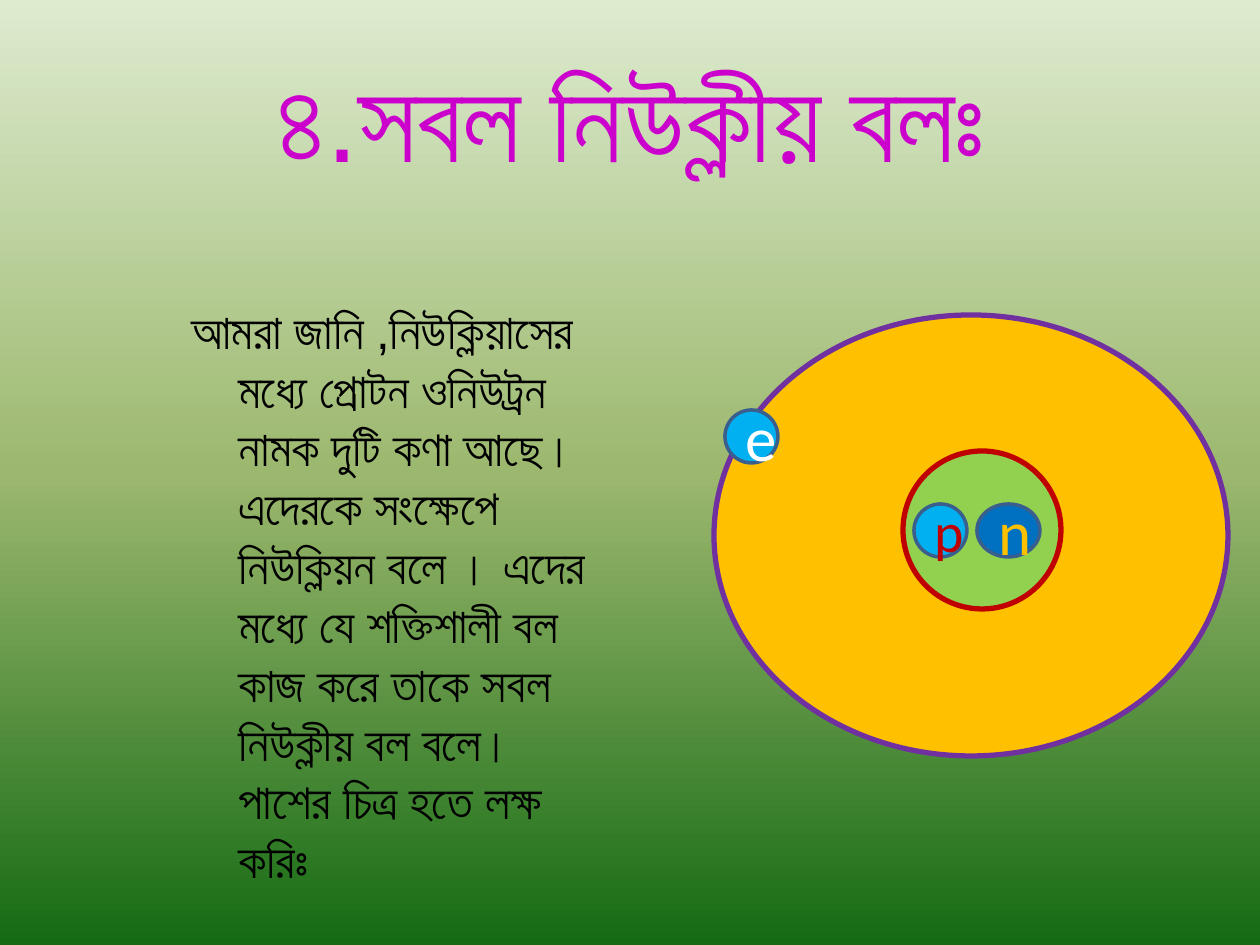
from copy import deepcopy

from pptx import Presentation
from pptx.dml.color import RGBColor
from pptx.enum.shapes import MSO_SHAPE
from pptx.enum.text import MSO_ANCHOR, MSO_AUTO_SIZE, PP_ALIGN
from pptx.oxml.ns import qn
from pptx.util import Emu, Pt

PX = 914400 // 126  # EMU in one px

MAGENTA = RGBColor(0xCC, 0x00, 0xCC)
BLACK = RGBColor(0x00, 0x00, 0x00)
WHITE = RGBColor(0xFF, 0xFF, 0xFF)
AMBER = RGBColor(0xFF, 0xC0, 0x00)
PURPLE = RGBColor(0x70, 0x30, 0xA0)
LIME = RGBColor(0x92, 0xD0, 0x50)
RED = RGBColor(0xC0, 0x00, 0x00)
SKY = RGBColor(0x00, 0xB0, 0xF0)
BLUE = RGBColor(0x00, 0x70, 0xC0)
SLATE = RGBColor(0x3A, 0x5F, 0x8C)
BACKDROP = [
    (0, RGBColor(0xDD, 0xEB, 0xCF)),
    (0.5, RGBColor(0x9C, 0xB8, 0x6E)),
    (1, RGBColor(0x15, 0x6B, 0x13)),
]

TITLE = "৪.সবল নিউক্লীয় বলঃ"
EXPLANATION = (
    "আমরা জানি ,নিউক্লিয়াসের মধ্যে প্রোটন ওনিউট্রন নামক দুটি কণা আছে। "
    "এদেরকে সংক্ষেপে নিউক্লিয়ন বলে । এদের মধ্যে যে শক্তিশালী বল কাজ করে "
    "তাকে সবল নিউক্লীয় বল বলে। পাশের চিত্র হতে লক্ষ করিঃ"
)
TITLE_BOX = (63, 38, 1134, 157)
EXPLANATION_BOX = (179, 294, 451, 557)
HANGING = 47

# Atom: box in px, fill, line colour, line width
SHELLS = [
    ((714, 315, 514, 441), AMBER, PURPLE, 3),
    ((903, 451, 158, 158), LIME, RED, 3),
]
# Particles: box in px, fill, letter, letter size, letter colour
PARTICLES = [
    ((914, 504, 53, 53), SKY, "p", 32, RED),
    ((977, 504, 63, 53), BLUE, "n", 36, AMBER),
    ((725, 410, 53, 53), SKY, "e", 36, WHITE),
]


def emu(box):
    return [Emu(length * PX) for length in box]


def write(frame, text, size, face, color, align):
    frame.text = text
    paragraph = frame.paragraphs[0]
    paragraph.alignment = align
    font = paragraph.runs[0].font
    for key, value in {"size": Pt(size), "name": face}.items():
        setattr(font, key, value)
    font.color.rgb = color
    return paragraph


def add_ellipse(group, box, fill, line, width):
    ellipse = group.shapes.add_shape(MSO_SHAPE.OVAL, *emu(box))
    ellipse.shadow.inherit = False
    ellipse.fill.solid()
    ellipse.fill.fore_color.rgb = fill
    ellipse.line.color.rgb = line
    ellipse.line.width = Pt(width)
    return ellipse


def paint_background(slide):
    fill = slide.background.fill
    fill.gradient()
    fill.gradient_angle = 270
    stop_list = next(slide.element.iter(qn("a:gsLst")))
    while len(stop_list) < len(BACKDROP):
        stop_list.append(deepcopy(stop_list[0]))
    for stop, (position, color) in zip(fill.gradient_stops, BACKDROP):
        stop.position = position
        stop.color.rgb = color


def main():
    prs = Presentation()
    prs.slide_width, prs.slide_height = emu((1260, 945))
    slide = prs.slides.add_slide(prs.slide_layouts[5])
    paint_background(slide)

    # Title
    title = slide.shapes.title
    title.left, title.top, title.width, title.height = emu(TITLE_BOX)
    title.text_frame.auto_size = MSO_AUTO_SIZE.NONE
    title.text_frame.vertical_anchor = MSO_ANCHOR.MIDDLE
    write(title.text_frame, TITLE, 66, "Arial", MAGENTA, PP_ALIGN.CENTER)

    # Explanation with a hanging indent
    explanation = slide.shapes.add_textbox(*emu(EXPLANATION_BOX)).text_frame
    explanation.word_wrap = True
    paragraph = write(explanation, EXPLANATION, 28, "Arial", BLACK, PP_ALIGN.LEFT)
    paragraph.space_before = Pt(5.6)
    indent = paragraph._p.get_or_add_pPr()
    indent.set("marL", str(HANGING * PX))
    indent.set("indent", str(-HANGING * PX))

    # Atom
    atom = slide.shapes.add_group_shape()
    for shell in SHELLS:
        add_ellipse(atom, *shell)
    for box, fill, letter, size, color in PARTICLES:
        particle = add_ellipse(atom, box, fill, SLATE, 2)
        particle.text_frame.vertical_anchor = MSO_ANCHOR.MIDDLE
        write(particle.text_frame, letter, size, "Calibri", color, PP_ALIGN.CENTER)

    prs.save("out.pptx")


if __name__ == "__main__":
    main()
